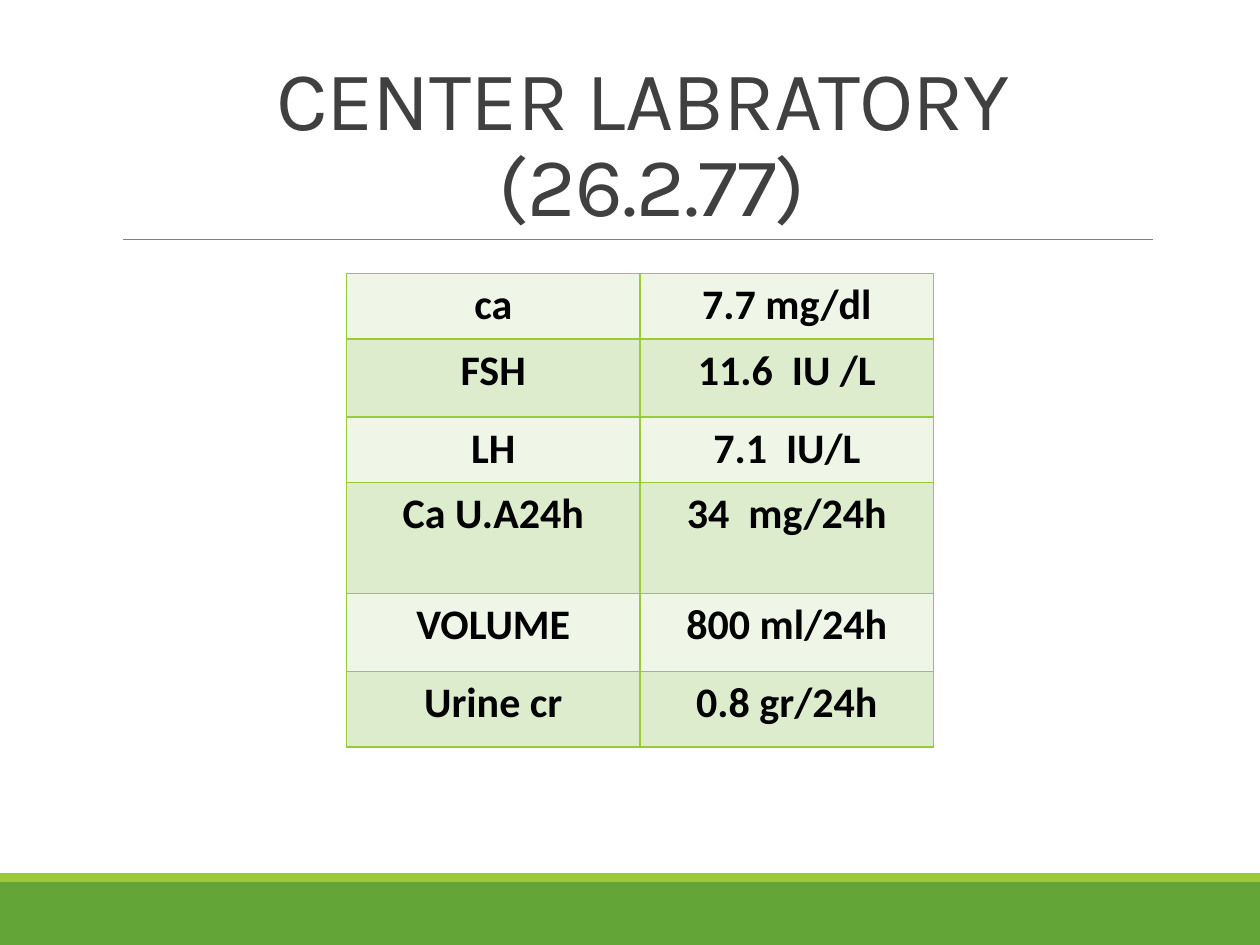
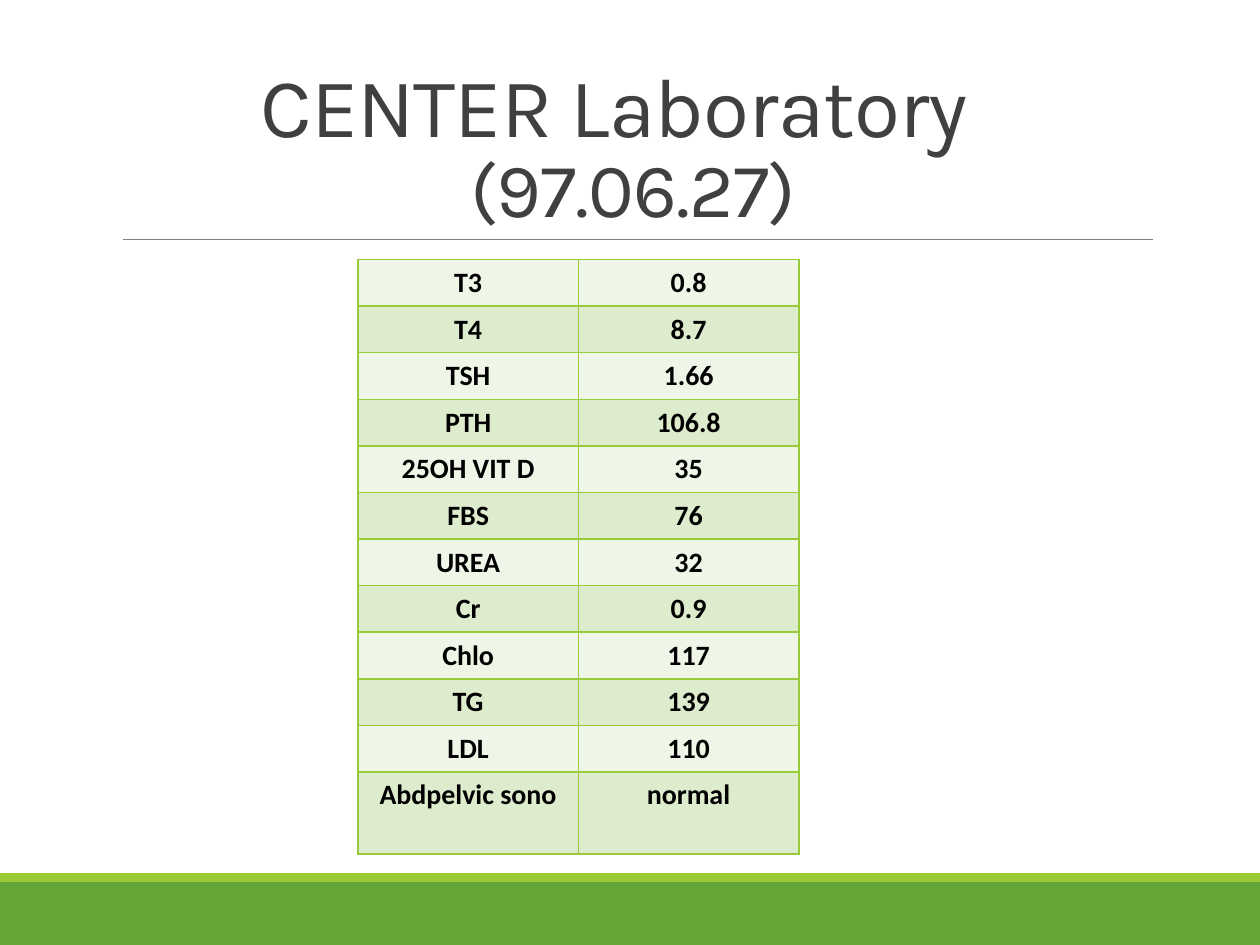
from dataclasses import dataclass

from lxml import etree
from pptx import Presentation
from pptx.dml.color import RGBColor
from pptx.enum import shapes, text
from pptx.oxml import ns
from pptx.slide import Slide
from pptx.util import Inches, Pt

DARK_GREEN = RGBColor(0x63, 0xA5, 0x37)
LIME = RGBColor(0x99, 0xCB, 0x38)
RULE_GREY = RGBColor(0x80, 0x80, 0x80)
TITLE_GREY = RGBColor(0x40, 0x40, 0x40)
BLACK = RGBColor(0, 0, 0)
ROW_FILLS = (RGBColor(0xEF, 0xF6, 0xE8), RGBColor(0xDE, 0xEC, 0xCE))

TITLE_FORMAT = {"name": "Karla"}
CELL_FORMAT = {"name": "Calibri", "bold": True}


@dataclass(frozen=True)
class Band:
    top: float
    height: float
    color: RGBColor


@dataclass(frozen=True)
class TitleLine:
    wording: str
    size: int = 48


@dataclass(frozen=True)
class Result:
    test: str
    value: str
    height: float = 0.37


@dataclass(frozen=True)
class LabReport:
    title: tuple[TitleLine, ...]
    left: float
    top: float
    column_width: float
    font_size: int
    results: tuple[Result, ...]


BANDS = (Band(7, 0.5, DARK_GREEN), Band(6.93, 0.07, LIME))

REPORTS = (
    LabReport(
        title=(TitleLine(" CENTER LABRATORY"), TitleLine("  (26.2.77)")),
        left=2.75, top=2.17, column_width=2.33, font_size=24,
        results=(
            Result("ca", "7.7 mg/dl", 0.52),
            Result("FSH", "11.6  IU /L", 0.62),
            Result("LH", "7.1  IU/L", 0.52),
            Result("Ca U.A24h", "34  mg/24h", 0.88),
            Result("VOLUME", "800 ml/24h", 0.62),
            Result("Urine cr", "0.8 gr/24h", 0.6),
        ),
    ),
    LabReport(
        title=(TitleLine("CENTER Laboratory  "), TitleLine("(97.06.27)", 44)),
        left=2.84, top=2.06, column_width=1.75, font_size=16,
        results=(
            Result("T3", "0.8"),
            Result("T4", "8.7"),
            Result("TSH", "1.66"),
            Result("PTH", "106.8"),
            Result("25OH VIT D", "35"),
            Result("FBS", "76"),
            Result("UREA", "32"),
            Result("Cr", "0.9"),
            Result("Chlo", "117"),
            Result("TG", "139"),
            Result("LDL", "110"),
            Result("Abdpelvic sono", "normal", 0.65),
        ),
    ),
)


def format_font(font, color: RGBColor, size: int, values: dict) -> None:
    for name, value in values.items():
        setattr(font, name, value)
    font.size = Pt(size)
    font.color.rgb = color


def add_frame(slide: Slide) -> None:
    """Draw the bottom bands and the rule under the title."""
    for band in BANDS:
        shape = slide.shapes.add_shape(
            shapes.MSO_SHAPE.RECTANGLE, 0, Inches(band.top), Inches(10), Inches(band.height))
        shape.shadow.inherit = False
        shape.fill.solid()
        shape.fill.fore_color.rgb = band.color
        shape.line.fill.background()
    rule = slide.shapes.add_connector(
        shapes.MSO_CONNECTOR.STRAIGHT, Inches(0.98), Inches(1.9), Inches(9.15), Inches(1.9))
    rule.line.color.rgb = RULE_GREY
    rule.line.width = Pt(0.5)
    etree.SubElement(rule.line._get_or_add_ln().getparent(), ns.qn("a:effectLst"))


def add_title(slide: Slide, lines: tuple[TitleLine, ...]) -> None:
    box = slide.shapes.add_textbox(Inches(0.9), Inches(0.31), Inches(8.25), Inches(1.59))
    frame = box.text_frame
    frame.word_wrap = True
    frame.vertical_anchor = text.MSO_ANCHOR.BOTTOM
    paragraph = frame.paragraphs[0]
    paragraph.alignment = text.PP_ALIGN.CENTER
    paragraph.line_spacing = 0.85
    for index, line in enumerate(lines):
        if index:
            paragraph.add_line_break()
        run = paragraph.add_run()
        run.text = line.wording
        format_font(run.font, TITLE_GREY, line.size, TITLE_FORMAT)
        run._r.get_or_add_rPr().set("spc", "-50")


def add_borders(cell) -> None:
    properties = cell._tc.get_or_add_tcPr()
    for side in ("lnL", "lnR", "lnT", "lnB"):
        line = etree.SubElement(properties, ns.qn(f"a:{side}"), w=str(Pt(1)))
        fill = etree.SubElement(line, ns.qn("a:solidFill"))
        etree.SubElement(fill, ns.qn("a:srgbClr"), val=str(LIME))


def add_results(slide: Slide, report: LabReport) -> None:
    height = sum(result.height for result in report.results)
    table = slide.shapes.add_table(
        len(report.results), 2, Inches(report.left), Inches(report.top),
        Inches(2 * report.column_width), Inches(height)).table
    table.first_row = False
    table.horz_banding = False
    for column in table.columns:
        column.width = Inches(report.column_width)
    for index, (row, result) in enumerate(zip(table.rows, report.results)):
        row.height = Inches(result.height)
        for cell, wording in zip(row.cells, (result.test, result.value)):
            add_borders(cell)
            cell.fill.solid()
            cell.fill.fore_color.rgb = ROW_FILLS[index % 2]
            paragraph = cell.text_frame.paragraphs[0]
            paragraph.alignment = text.PP_ALIGN.CENTER
            run = paragraph.add_run()
            run.text = wording
            format_font(run.font, BLACK, report.font_size, CELL_FORMAT)


def main() -> None:
    presentation = Presentation()
    presentation.slide_width = Inches(10)
    presentation.slide_height = Inches(7.5)
    for report in REPORTS:
        slide = presentation.slides.add_slide(presentation.slide_layouts[6])
        add_frame(slide)
        add_title(slide, report.title)
        add_results(slide, report)
    presentation.save("out.pptx")


if __name__ == "__main__":
    main()
